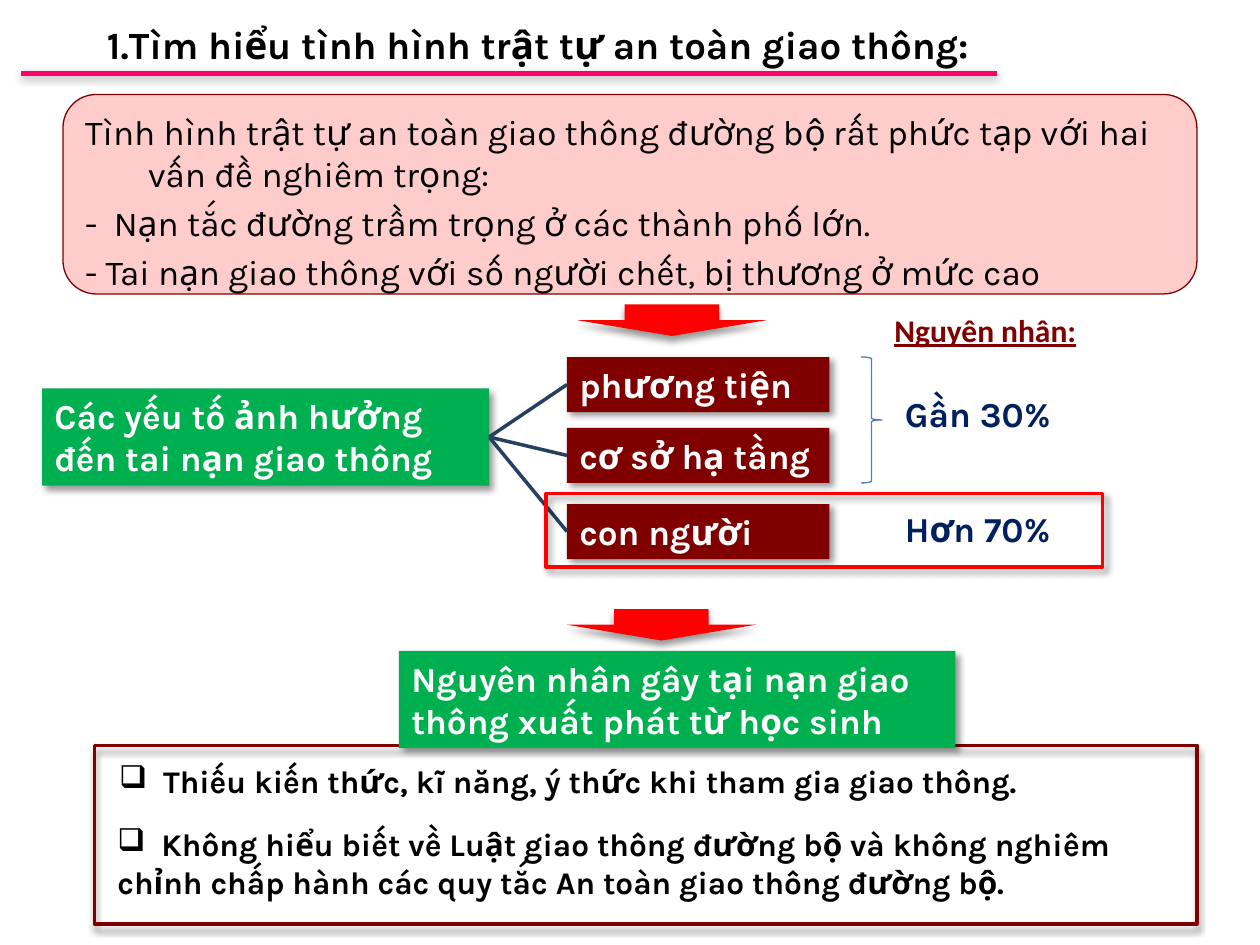
from lxml import etree
from pptx import Presentation
from pptx.dml.color import RGBColor
from pptx.enum import shapes, text
from pptx.oxml.ns import qn
from pptx.util import Pt

KIND = shapes.MSO_SHAPE
GREEN, MAROON, RED, NAVY = "00B050", "800000", "FF0000", "002060"
DOWN = dict(blur=4, dist=3, angle=90, alpha=40)
SLANT = dict(DOWN, angle=45)
RULE = dict(blur=5, dist=1.8, angle=90, alpha=35)


def color(code):
    return RGBColor.from_string(code)


def shade(node, blur, dist, angle, alpha):
    """Put an outer shadow in an effect list."""
    cast = etree.SubElement(node, qn("a:outerShdw"), blurRad=str(Pt(blur)),
                            dist=str(Pt(dist)), dir=str(angle * 60000),
                            algn="t", rotWithShape="0")
    tone = etree.SubElement(cast, qn("a:srgbClr"), val="000000")
    etree.SubElement(tone, qn("a:alpha"), val=str(alpha * 1000))


def write(shape, lines, hue, size=20, name="Karla", wrap=True, grow=True,
          anchor=text.MSO_ANCHOR.TOP, before=0, hang=0, bullet=None, **style):
    frame = shape.text_frame
    frame.word_wrap = wrap
    frame.vertical_anchor = anchor
    frame.auto_size = (text.MSO_AUTO_SIZE.SHAPE_TO_FIT_TEXT if grow
                       else text.MSO_AUTO_SIZE.NONE)
    look = dict(size=Pt(size), name=name, **style)
    for i, line in enumerate(lines):
        par = frame.add_paragraph() if i else frame.paragraphs[0]
        par.alignment = text.PP_ALIGN.LEFT
        par.space_before = Pt(before)
        props = par._p.get_or_add_pPr()
        if hang:
            props.set("marL", str(Pt(hang)))
            props.set("indent", str(-Pt(hang)))
        if bullet:
            etree.SubElement(props, qn("a:buChar"), char=bullet)
        run = par.add_run()
        run.text = line
        for key, value in look.items():
            setattr(run.font, key, value)
        run.font.color.rgb = color(hue)


def label(slide, area, line, hue, **style):
    box = slide.shapes.add_textbox(*map(Pt, area))
    write(box, [line], hue, bold=True, **style)


def block(slide, kind, area, fill=None, edge=None, width=1, shadow=None):
    shape = slide.shapes.add_shape(kind, *map(Pt, area))
    shape.shadow.inherit = False
    if fill:
        shape.fill.solid()
        shape.fill.fore_color.rgb = color(fill)
    else:
        shape.fill.background()
    if edge:
        shape.line.color.rgb = color(edge)
        shape.line.width = Pt(width)
    else:
        shape.line.fill.background()
    if shadow:
        shade(shape._element.spPr.find(qn("a:effectLst")), **shadow)
    return shape


def panel(slide, area, line, fill, wrap=True):
    """Draw a filled box with bold white text."""
    shape = block(slide, KIND.RECTANGLE, area, fill, shadow=SLANT)
    write(shape, [line], "FFFFFF", wrap=wrap, bold=True)
    return shape


def stroke(slide, ends, hue, width, shadow=None):
    line = slide.shapes.add_connector(shapes.MSO_CONNECTOR.STRAIGHT, *map(Pt, ends))
    line.line.color.rgb = color(hue)
    line.line.width = Pt(width)
    effects = etree.SubElement(line._element.spPr, qn("a:effectLst"))
    if shadow:
        shade(effects, **shadow)
    return line


def join(slide, start, end):
    line = stroke(slide, (0, 0, 0, 0), "254061", 2)
    line.begin_connect(start, 3)
    line.end_connect(end, 1)


def main():
    deck = Presentation()
    deck.slide_width, deck.slide_height = Pt(720), Pt(540)
    slide = deck.slides.add_slide(deck.slide_layouts[6])

    stroke(slide, (12, 42, 570, 42), "FF0066", 3, RULE)
    intro = block(slide, KIND.ROUNDED_RECTANGLE, (36, 54, 648, 114),
                  "FFCCCC", MAROON, 0.75)
    write(intro, [
        "Tình hình trật tự an toàn giao thông đường bộ rất phức tạp với hai "
        "vấn đề nghiêm trọng:",
        "-  Nạn tắc đường trầm trọng ở các thành phố lớn.",
        "- Tai nạn giao thông với số người chết, bị thương ở mức cao",
    ], "000000", grow=False, before=4, hang=36)
    label(slide, (54, 10, 696, 30), "1.Tìm hiểu tình hình trật tự an toàn giao thông:",
          "000000", size=22, grow=False, anchor=text.MSO_ANCHOR.MIDDLE)

    for left, top in ((330, 174), (324, 348)):
        block(slide, KIND.DOWN_ARROW, (left, top, 108, 18), RED, shadow=DOWN)

    root = panel(slide, (24, 222, 255.5, 55.5),
                 "Các yếu tố ảnh hưởng đến tai nạn giao thông", GREEN)
    for top, line, wrap in ((204, "phương tiện", True),
                            (244.5, "cơ sở hạ tầng", False),
                            (288, "con người", True)):
        leaf = panel(slide, (324, top, 150, 31.5), line, MAROON, wrap)
        join(slide, root, leaf)

    block(slide, KIND.RIGHT_BRACE, (492, 204, 12, 72), edge="4B7EBC", width=0.75)
    for top, line in ((220.5, "Gần 30%"), (286.5, "Hơn 70%")):
        label(slide, (510, top, 117, 31.5), line, NAVY, wrap=False)
    label(slide, (504, 174, 174, 30), "Nguyên nhân:", MAROON,
          size=18, name="Calibri", underline=True)
    block(slide, KIND.RECTANGLE, (312, 282, 318, 42), edge=RED, width=2, shadow=SLANT)

    for area, line in (
        ((61, 432, 618, 29), "  Thiếu kiến thức, kĩ năng, ý thức khi tham gia giao thông."),
        ((60, 468, 625, 51), "  Không hiểu biết về Luật giao thông đường bộ và không nghiêm "
         "chỉnh chấp hành các quy tắc An toàn giao thông đường bộ."),
    ):
        label(slide, area, line, "000000", size=18, bullet="❑")
    block(slide, KIND.RECTANGLE, (54, 426, 630, 102), edge=MAROON, width=2, shadow=DOWN)
    panel(slide, (228, 372, 318, 55.5),
          "Nguyên nhân gây tại nạn giao thông xuất phát từ học sinh", GREEN)

    deck.save("out.pptx")


if __name__ == "__main__":
    main()
